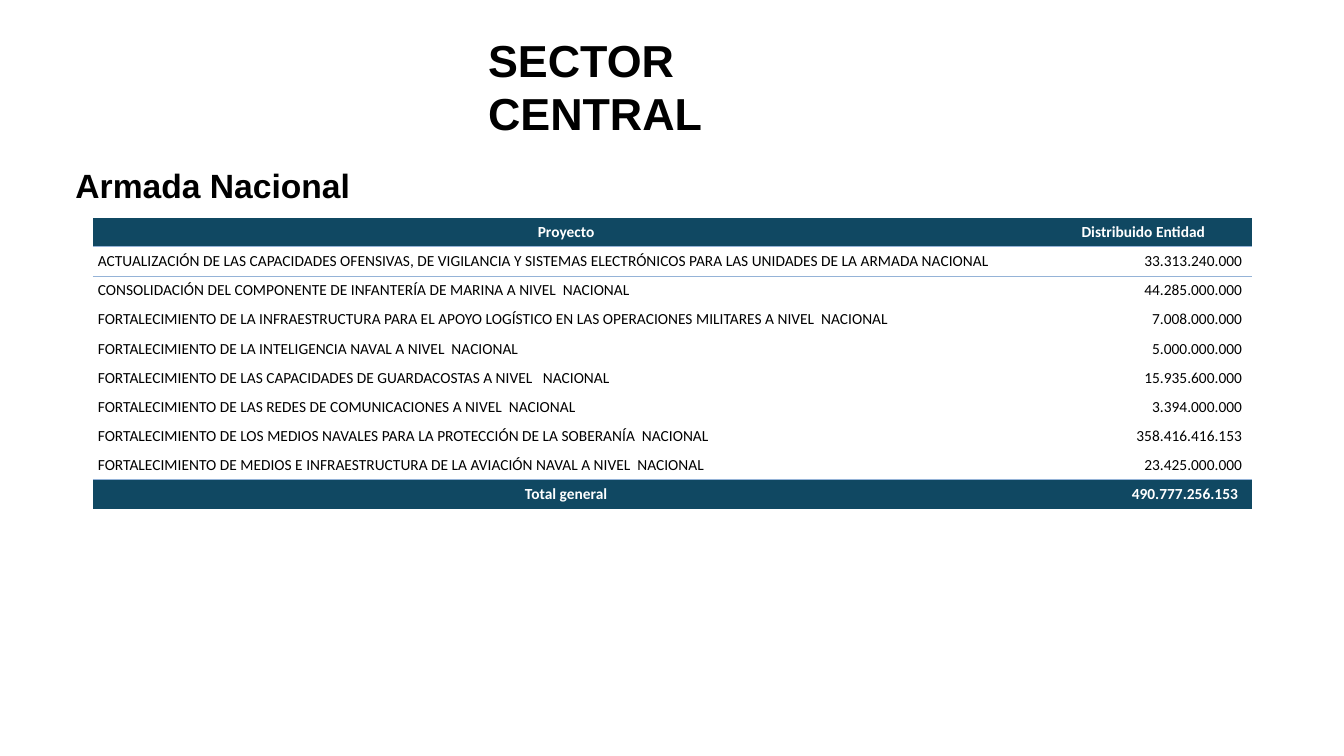
from pptx import Presentation
from pptx.dml.color import RGBColor
from pptx.enum.text import MSO_ANCHOR, MSO_AUTO_SIZE, PP_ALIGN
from pptx.oxml import parse_xml
from pptx.oxml.ns import nsdecls, qn
from pptx.util import Inches, Pt

# Content
TITLE = "SECTOR CENTRAL"
SUBTITLE = "Armada Nacional"
HEADER = ("Proyecto", "Distribuido Entidad")
PROJECTS = [
    ("ACTUALIZACIÓN DE LAS CAPACIDADES OFENSIVAS, DE VIGILANCIA Y SISTEMAS ELECTRÓNICOS "
     "PARA LAS UNIDADES DE LA ARMADA NACIONAL", "33.313.240.000"),
    ("CONSOLIDACIÓN DEL COMPONENTE DE INFANTERÍA DE MARINA A NIVEL  NACIONAL", "44.285.000.000"),
    ("FORTALECIMIENTO DE LA INFRAESTRUCTURA PARA EL APOYO LOGÍSTICO EN LAS OPERACIONES "
     "MILITARES A NIVEL  NACIONAL", "7.008.000.000"),
    ("FORTALECIMIENTO DE LA INTELIGENCIA NAVAL A NIVEL  NACIONAL", "5.000.000.000"),
    ("FORTALECIMIENTO DE LAS CAPACIDADES DE GUARDACOSTAS A NIVEL   NACIONAL", "15.935.600.000"),
    ("FORTALECIMIENTO DE LAS REDES DE COMUNICACIONES A NIVEL  NACIONAL", "3.394.000.000"),
    ("FORTALECIMIENTO DE LOS MEDIOS NAVALES PARA LA PROTECCIÓN DE LA SOBERANÍA  NACIONAL",
     "358.416.416.153"),
    ("FORTALECIMIENTO DE MEDIOS E INFRAESTRUCTURA DE LA AVIACIÓN NAVAL A NIVEL  NACIONAL",
     "23.425.000.000"),
]
TOTAL = ("Total general", "490.777.256.153")

BAND, RULE, BLACK, WHITE = "104862", "95B3D7", "000000", "FFFFFF"
COLUMN_WIDTHS = (9.39, 2.11)
ROW_HEIGHT = 0.28
NO_GRID_STYLE = "{2D5ABB26-0587-4C30-8999-92F81FD0307C}"


def color(value):
    return RGBColor.from_string(value)


def set_font(paragraph, name, size, value, bold):
    font = paragraph.font
    font.name, font.size, font.bold = name, Pt(size), bold
    font.color.rgb = color(value)


def fill_heading(shape, text, size):
    frame = shape.text_frame
    frame.word_wrap = True
    frame.auto_size = MSO_AUTO_SIZE.NONE
    frame.vertical_anchor = MSO_ANCHOR.TOP
    frame.text = text
    paragraph = frame.paragraphs[0]
    paragraph.alignment = PP_ALIGN.LEFT
    paragraph.line_spacing = 1.0
    set_font(paragraph, "Arial", size, BLACK, True)


def add_rule(cell, side):
    line = parse_xml(
        f'<a:{side} {nsdecls("a")} w="9525"><a:solidFill><a:srgbClr val="{RULE}"/>'
        f'</a:solidFill></a:{side}>')
    cell._tc.get_or_add_tcPr().insert(0, line)


presentation = Presentation()
presentation.slide_width, presentation.slide_height = Inches(13.33), Inches(7.5)
slide = presentation.slides.add_slide(presentation.slide_layouts[5])

# Headings
title = slide.shapes.title
title.left, title.top = Inches(4.74), Inches(0.27)
title.width, title.height = Inches(4.23), Inches(1.17)
fill_heading(title, TITLE, 32)
subtitle = slide.shapes.add_textbox(Inches(0.65), Inches(1.59), Inches(4.23), Inches(0.5))
fill_heading(subtitle, SUBTITLE, 24)

# Budget table
rows = [HEADER, *PROJECTS, TOTAL]
last = len(rows) - 1
table = slide.shapes.add_table(
    len(rows), len(HEADER), Inches(0.92), Inches(2.16),
    Inches(sum(COLUMN_WIDTHS)), Inches(ROW_HEIGHT * len(rows))).table
table.first_row = table.horz_banding = False
table._tbl.tblPr.find(qn("a:tableStyleId")).text = NO_GRID_STYLE
for column, width in zip(table.columns, COLUMN_WIDTHS):
    column.width = Inches(width)

for row_index, row in enumerate(rows):
    table.rows[row_index].height = Inches(ROW_HEIGHT)
    is_band = row_index in (0, last)
    for column_index, text in enumerate(row):
        cell = table.cell(row_index, column_index)
        is_amount = column_index == 1
        cell.text = text
        cell.margin_left = cell.margin_top = cell.margin_bottom = Inches(0.05)
        right_margin = 0.05
        if is_amount:
            right_margin = 0.14 if row_index == last else 0.1
        cell.margin_right = Inches(right_margin)
        cell.vertical_anchor = MSO_ANCHOR.BOTTOM
        paragraph = cell.text_frame.paragraphs[0]
        if is_amount and row_index > 0:
            paragraph.alignment = PP_ALIGN.RIGHT
        else:
            paragraph.alignment = PP_ALIGN.CENTER if is_band else PP_ALIGN.LEFT
        set_font(paragraph, "Calibri", 11, WHITE if is_band else BLACK, is_band)
        if is_band:
            cell.fill.solid()
            cell.fill.fore_color.rgb = color(BAND)
        else:
            cell.fill.background()
        # Thin rules where the bands meet the projects
        if row_index in (0, last - 1):
            add_rule(cell, "lnB")
        if row_index in (1, last):
            add_rule(cell, "lnT")

presentation.save("out.pptx")
